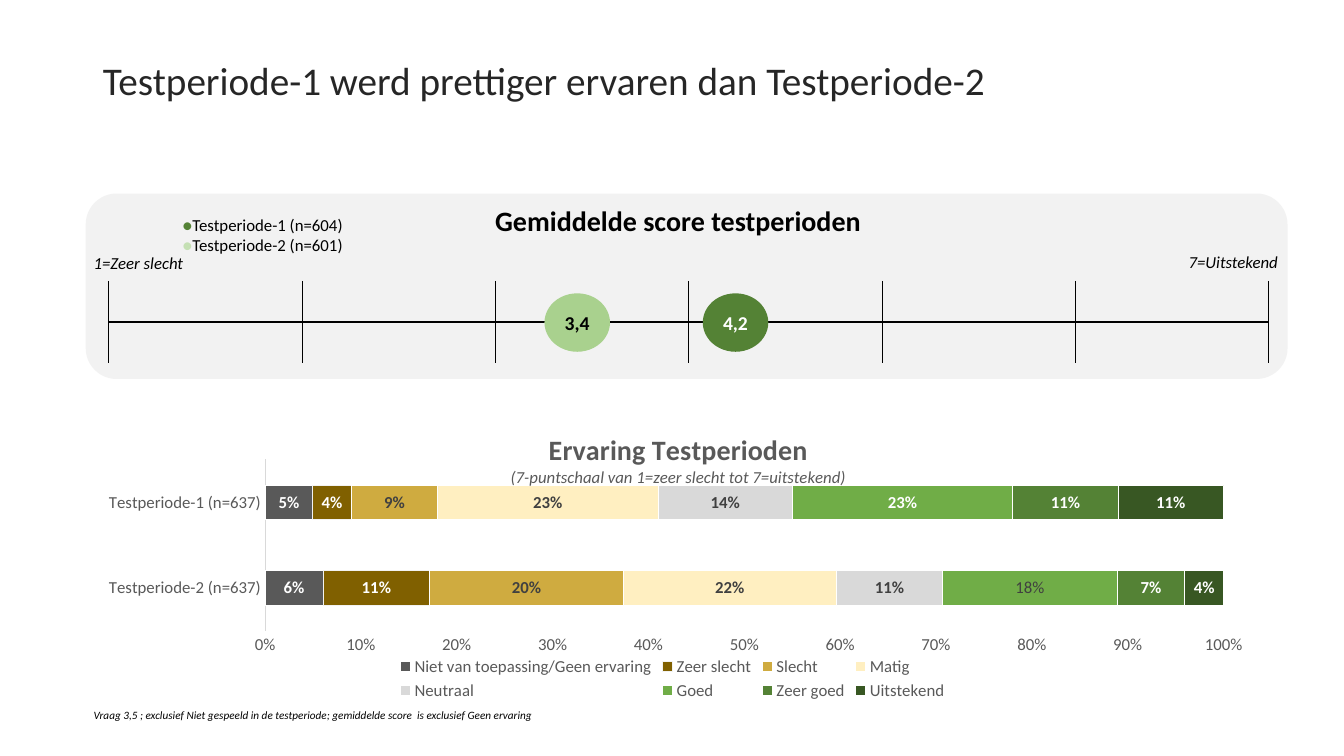
from dataclasses import dataclass
from typing import Any

from lxml.etree import SubElement
from pptx import Presentation
from pptx.chart.data import CategoryChartData
from pptx.dml.color import RGBColor
from pptx.enum.chart import XL_CHART_TYPE as ChartType, XL_LEGEND_POSITION as LegendPosition
from pptx.enum.chart import XL_TICK_MARK as TickMark
from pptx.enum.shapes import MSO_SHAPE as Shape
from pptx.enum.text import MSO_ANCHOR as Anchor, MSO_AUTO_SIZE as AutoSize, PP_ALIGN as Align
from pptx.oxml import parse_xml
from pptx.oxml.ns import nsdecls, qn
from pptx.util import Inches, Pt

FONT = "Calibri"
BLACK = RGBColor(0x00, 0x00, 0x00)
WHITE = RGBColor(0xFF, 0xFF, 0xFF)
INK = RGBColor(0x26, 0x26, 0x26)
DARK = RGBColor(0x40, 0x40, 0x40)
GRAY = RGBColor(0x59, 0x59, 0x59)
SILVER = RGBColor(0xD9, 0xD9, 0xD9)
PANEL = RGBColor(0xF2, 0xF2, 0xF2)
BROWN = RGBColor(0x80, 0x60, 0x00)
OCHRE = RGBColor(0xBF, 0x90, 0x00)
YELLOW = RGBColor(0xFF, 0xD9, 0x66)
GREEN = RGBColor(0x70, 0xAD, 0x47)
MOSS = RGBColor(0x54, 0x82, 0x35)
FOREST = RGBColor(0x38, 0x57, 0x23)
LIME = RGBColor(0xA9, 0xD1, 0x8E)
PALE = RGBColor(0xC5, 0xE0, 0xB4)


@dataclass
class Span:
    text: str
    size: float = 12
    color: RGBColor = BLACK
    bold: bool = False
    italic: bool = False


@dataclass
class Label:
    box: tuple[float, float, float, float]
    lines: list[list[Span]]
    align: Align = Align.LEFT
    wrap: bool = False


@dataclass
class Score:
    left: float
    fill: RGBColor
    span: Span


@dataclass
class Answer:
    name: str
    values: tuple[float, float]
    fill: RGBColor
    label: RGBColor = WHITE
    bold: bool = True
    opacity: int = 100
    edge: RGBColor = WHITE


LABELS = [
    Label((0.83, 6.98, 4.61, 0.24), [[Span(
        "Vraag 3,5 ; exclusief Niet gespeeld in de testperiode; "
        "gemiddelde score  is exclusief Geen ervaring", 8, italic=True)]]),
    Label((1.71, 2.08, 1.84, 0.5), [
        [Span("●", color=MOSS), Span("Testperiode-1 (n=604)")],
        [Span("●", color=PALE), Span("Testperiode-2 (n=601)")]]),
    Label((3.89, 1.97, 5.67, 0.44), [[Span("Gemiddelde score testperioden", 20, bold=True)]],
          Align.CENTER, True),
    Label((0.83, 2.46, 1.1, 0.3), [[Span("1=Zeer slecht", italic=True)]]),
    Label((11.69, 2.45, 1.1, 0.3), [[Span("7=Uitstekend", italic=True)]]),
]
SCORES = [
    Score(5.4, LIME, Span("3,4", 14, BLACK, True)),
    Score(6.97, MOSS, Span("4,2", 14, WHITE, True)),
]
CATEGORIES = ["Testperiode-2 (n=637)", "Testperiode-1 (n=637)"]
ANSWERS = [
    Answer("Niet van toepassing/Geen ervaring", (0.06, 0.05), GRAY),
    Answer("Zeer slecht", (0.11, 0.04), BROWN, edge=PANEL),
    Answer("Slecht", (0.2, 0.09), OCHRE, DARK, opacity=75),
    Answer("Matig", (0.22, 0.23), YELLOW, DARK, opacity=40),
    Answer("Neutraal", (0.11, 0.14), SILVER, DARK),
    Answer("Goed", (0.18, 0.23), GREEN, DARK, bold=False),
    Answer("Zeer goed", (0.07, 0.11), MOSS),
    Answer("Uitstekend", (0.04, 0.11), FOREST),
]


def set_font(font: Any, size: float, color: RGBColor, bold: bool = False, italic: bool = False) -> None:
    formats = {"name": FONT, "size": Pt(size), "bold": bold, "italic": italic}
    for name, value in formats.items():
        setattr(font, name, value)
    font.color.rgb = color


def write(para: Any, spans: list[Span]) -> None:
    for span in spans:
        run = para.add_run()
        run.text = span.text
        set_font(run.font, span.size, span.color, span.bold, span.italic)


def add_label(page: Any, label: Label) -> None:
    frame = page.shapes.add_textbox(*map(Inches, label.box)).text_frame
    frame.word_wrap = label.wrap
    frame.auto_size = AutoSize.SHAPE_TO_FIT_TEXT
    for index, spans in enumerate(label.lines):
        para = frame.add_paragraph() if index else frame.paragraphs[0]
        para.alignment = label.align
        write(para, spans)


def add_filled(page: Any, kind: Shape, box: tuple[float, ...], fill: RGBColor) -> Any:
    shape = page.shapes.add_shape(kind, *map(Inches, box))
    shape.shadow.inherit = False
    shape.fill.solid()
    shape.fill.fore_color.rgb = fill
    shape.line.fill.background()
    return shape


def add_score(page: Any, score: Score) -> None:
    frame = add_filled(page, Shape.OVAL, (score.left, 2.91, 0.65, 0.58), score.fill).text_frame
    frame.margin_left = frame.margin_right = 0
    frame.vertical_anchor = Anchor.MIDDLE
    frame.paragraphs[0].alignment = Align.CENTER
    write(frame.paragraphs[0], [score.span])


def set_border(cell: Any, side: str, color: RGBColor, width: float) -> None:
    line = SubElement(cell._tc.get_or_add_tcPr(), qn(f"a:ln{side}"), w=str(Pt(width)))
    SubElement(SubElement(line, qn("a:solidFill")), qn("a:srgbClr"), val=str(color))


def add_scale(page: Any, rows: int = 2, columns: int = 6) -> None:
    table = page.shapes.add_table(rows, columns, *map(Inches, (1.08, 2.79, 11.5, 0.81))).table
    table.first_row = table.horz_banding = False
    for row in range(rows):
        for column in range(columns):
            cell = table.cell(row, column)
            cell.margin_top = cell.margin_bottom = 0
            set_border(cell, "L", BLACK, 0.5 if column else 1)
            set_border(cell, "R", BLACK, 0.5 if column < columns - 1 else 1)
            set_border(cell, "T", *((BLACK, 1) if row else (PANEL, 0.5)))
            set_border(cell, "B", *((PANEL, 0.5) if row else (BLACK, 1)))
            cell.fill.background()


def layout_xml(target: str, **place: float) -> Any:
    modes = "".join(f'<c:{key}Mode val="edge"/>' for key in ("x", "y"))
    sizes = "".join(f'<c:{key} val="{value}"/>' for key, value in place.items())
    return parse_xml(f'<c:layout {nsdecls("c")}><c:manualLayout>{target}{modes}{sizes}'
                     '</c:manualLayout></c:layout>')


def place_part(element: Any, layout: Any, index: int) -> None:
    for old in element.findall(qn("c:layout")):
        element.remove(old)
    element.insert(index, layout)


def format_answer(series: Any, answer: Answer) -> None:
    series.format.fill.solid()
    series.format.fill.fore_color.rgb = answer.fill
    if answer.opacity < 100:
        color = series._element.find(".//" + qn("a:srgbClr"))
        SubElement(color, qn("a:alpha"), val=str(answer.opacity * 1000))
    series.format.line.color.rgb = answer.edge
    series.format.line.width = Pt(0.75)
    labels = series.data_labels
    formats = {"show_value": True, "number_format": "0%", "number_format_is_linked": False}
    for name, value in formats.items():
        setattr(labels, name, value)
    set_font(labels.font, 12, answer.label, answer.bold)


def add_answers(page: Any) -> None:
    data = CategoryChartData(number_format="0%")
    data.categories = CATEGORIES
    for answer in ANSWERS:
        data.add_series(answer.name, answer.values)
    chart = page.shapes.add_chart(ChartType.BAR_STACKED_100,
                                  *map(Inches, (0.83, 4.07, 11.68, 2.92)), data).chart
    set_font(chart.font, 10, BLACK)
    # Chart title and plot area
    frame = chart.chart_title.text_frame
    write(frame.paragraphs[0], [Span("Ervaring Testperioden", 20, GRAY, True)])
    write(frame.add_paragraph(), [Span("(7-puntschaal van 1=zeer slecht tot 7=uitstekend)",
                                       12, GRAY, italic=True)])
    place_part(chart.chart_title._element, layout_xml("", x=0.36, y=0.06), 1)
    inner = '<c:layoutTarget val="inner"/>'
    place_part(chart._chartSpace.chart.plotArea,
               layout_xml(inner, x=0.154, y=0.167, w=0.814, h=0.583), 0)
    # Axes and legend
    for axis in (chart.category_axis, chart.value_axis):
        axis.has_major_gridlines = False
        axis.major_tick_mark = axis.minor_tick_mark = TickMark.NONE
        set_font(axis.tick_labels.font, 12, GRAY)
    chart.category_axis.format.line.color.rgb = SILVER
    chart.category_axis.format.line.width = Pt(0.75)
    chart.value_axis.format.line.fill.background()
    chart.value_axis.tick_labels.number_format = "0%"
    chart.value_axis.tick_labels.number_format_is_linked = False
    chart.has_legend = True
    chart.legend.position = LegendPosition.BOTTOM
    chart.legend.include_in_layout = False
    set_font(chart.legend.font, 12, GRAY)
    # Bars
    plot = chart.plots[0]
    plot.gap_width, plot.overlap, plot.vary_by_categories = 150, 100, False
    for series, answer in zip(plot.series, ANSWERS):
        format_answer(series, answer)
        if answer.name == "Goed":
            set_font(series.points[1].data_label.font, 12, WHITE, True)


def main() -> None:
    deck = Presentation()
    deck.slide_width, deck.slide_height = Inches(13.33), Inches(7.5)
    page = deck.slides.add_slide(deck.slide_layouts[5])
    # Title
    title = page.shapes.title
    box = {"left": 0.92, "top": 0.4, "width": 11.5, "height": 0.84}
    for name, value in box.items():
        setattr(title, name, Inches(value))
    title.text_frame.vertical_anchor = Anchor.MIDDLE
    para = title.text_frame.paragraphs[0]
    para.alignment, para.line_spacing = Align.LEFT, 0.9
    write(para, [Span("Testperiode-1 werd prettiger ervaren dan Testperiode-2", 28, INK)])
    # Score panel and answer chart
    add_filled(page, Shape.ROUNDED_RECTANGLE, (0.85, 1.92, 11.92, 1.84), PANEL)
    add_answers(page)
    for label in LABELS:
        add_label(page, label)
    add_scale(page)
    for score in SCORES:
        add_score(page, score)
    deck.save("out.pptx")


if __name__ == "__main__":
    main()
